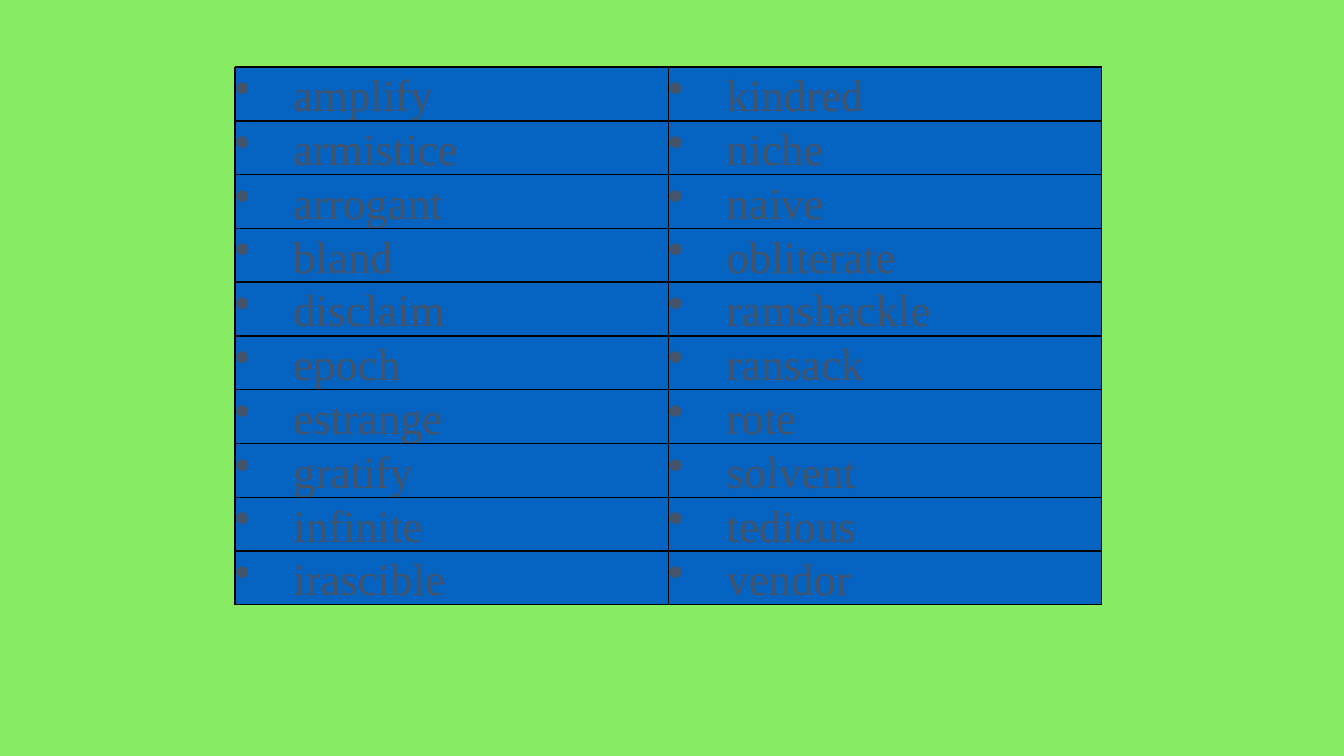
from lxml import etree
from pptx import Presentation
from pptx import util as u
from pptx.dml.color import RGBColor
from pptx.enum import shapes, text
from pptx.oxml import ns

COLORS = {"background": "87EC63", "cell": "0563C1", "word": "44546A", "border": "000000"}
COLUMNS = [
    ["amplify", "armistice", "arrogant", "bland", "disclaim",
     "epoch", "estrange", "gratify", "infinite", "irascible"],
    ["kindred", "niche", "naive", "obliterate", "ramshackle",
     "ransack", "rote", "solvent", "tedious", "vendor"],
]
LEFT, TOP = u.Cm(5.92), u.Cm(1.69)
COLUMN_WIDTH, ROW_HEIGHT = u.Cm(10.92), u.Cm(1.355)
ROW_COUNT = len(COLUMNS[0])
RIGHT = LEFT + COLUMN_WIDTH * len(COLUMNS)
BOTTOM = TOP + ROW_HEIGHT * ROW_COUNT


def write_bullet(frame, words, *, size, font, color, indent):
    """Put words in the frame as one bulleted paragraph with a hanging indent."""
    paragraph = frame.paragraphs[0]
    paragraph.alignment = text.PP_ALIGN.LEFT
    properties = paragraph._p.get_or_add_pPr()
    properties.set("marL", str(indent))
    properties.set("indent", str(-indent))
    etree.SubElement(properties, ns.qn("a:buChar"), char="•")
    run = paragraph.add_run()
    run.text = words
    run.font.size = u.Pt(size)
    run.font.name = font
    run.font.color.rgb = RGBColor.from_string(color)


def add_rule(x1, y1, x2, y2):
    rule = slide.shapes.add_connector(shapes.MSO_CONNECTOR.STRAIGHT, x1, y1, x2, y2)
    rule.line.color.rgb = RGBColor.from_string(COLORS["border"])
    rule.line.width = u.Pt(1)
    etree.SubElement(rule._element.spPr, ns.qn("a:effectLst"))


presentation = Presentation()
presentation.slide_width = u.Cm(33.87)
presentation.slide_height = u.Cm(19.05)
slide = presentation.slides.add_slide(presentation.slide_layouts[6])
slide.background.fill.solid()
slide.background.fill.fore_color.rgb = RGBColor.from_string(COLORS["background"])

for column, words in enumerate(COLUMNS):
    for row, word in enumerate(words):
        shape = slide.shapes.add_shape(
            shapes.MSO_SHAPE.RECTANGLE, LEFT + column * COLUMN_WIDTH,
            TOP + row * ROW_HEIGHT, COLUMN_WIDTH, ROW_HEIGHT)
        shape.shadow.inherit = False
        shape.fill.solid()
        shape.fill.fore_color.rgb = RGBColor.from_string(COLORS["cell"])
        shape.line.fill.background()
        frame = shape.text_frame
        frame.margin_left = frame.margin_right = frame.margin_top = frame.margin_bottom = 0
        frame.vertical_anchor = text.MSO_ANCHOR.MIDDLE
        frame.word_wrap = True
        write_bullet(frame, word, size=32, font="Times New Roman",
                     color=COLORS["word"], indent=u.Cm(1.47))

for row in range(ROW_COUNT + 1):
    y = TOP + row * ROW_HEIGHT
    add_rule(LEFT, y, RIGHT, y)
for column in range(len(COLUMNS) + 1):
    x = LEFT + column * COLUMN_WIDTH
    add_rule(x, TOP, x, BOTTOM)

presentation.save("out.pptx")
